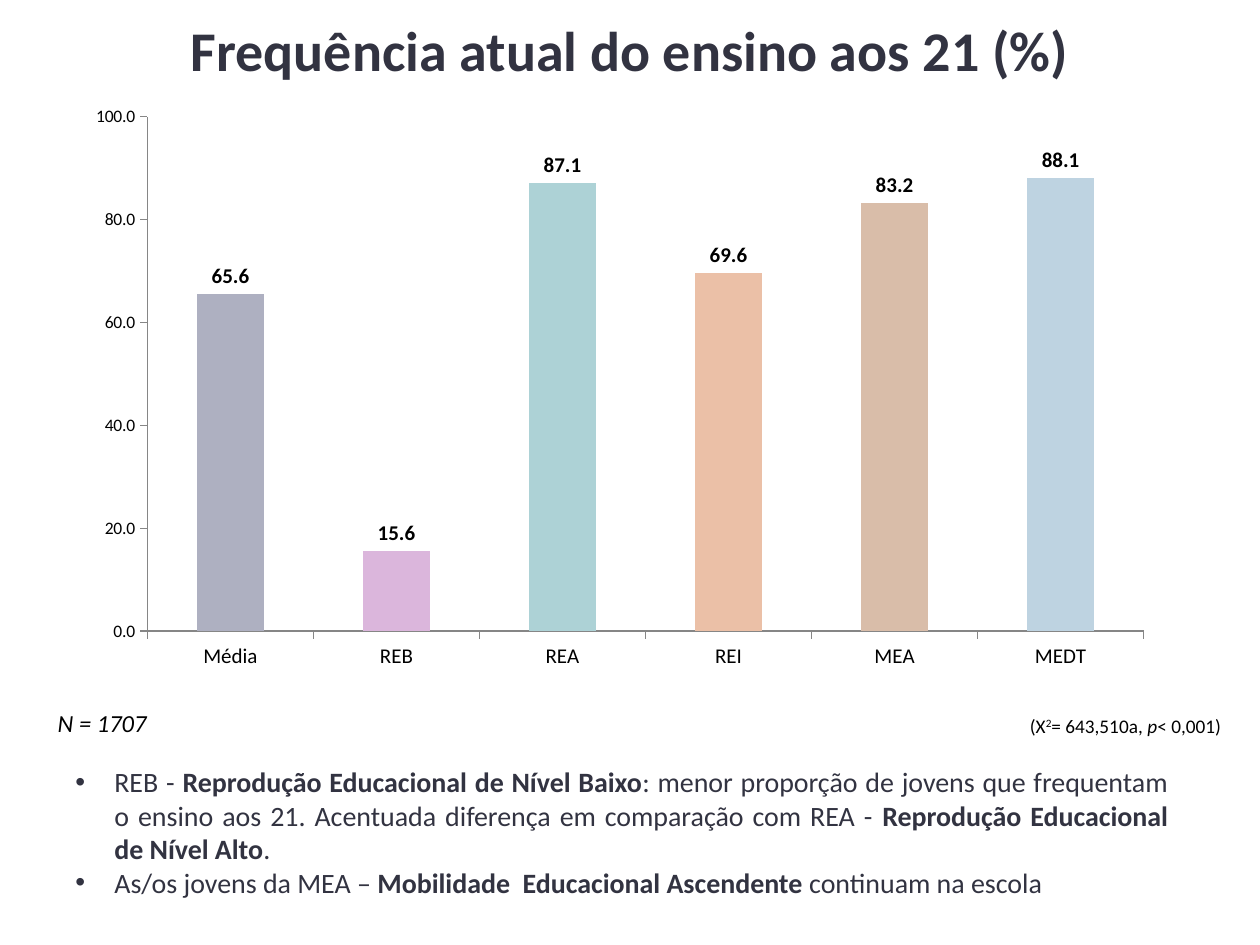
from lxml import etree
from pptx import Presentation
from pptx.chart.data import CategoryChartData
from pptx.dml.color import RGBColor
from pptx.enum.chart import XL_CHART_TYPE as Chart, XL_LABEL_POSITION as LabelPos, XL_TICK_MARK as Tick
from pptx.enum.text import MSO_ANCHOR as Anchor, PP_ALIGN as Align
from pptx.oxml import parse_xml
from pptx.oxml.ns import nsdecls, qn
from pptx.util import Inches, Pt

INK = RGBColor(0x32, 0x33, 0x41)
BLACK = RGBColor(0x00, 0x00, 0x00)
AXIS = RGBColor(0x86, 0x86, 0x86)
LILAC_GREY = RGBColor(0xAE, 0xB0, 0xC1)
PINK = RGBColor(0xDB, 0xB6, 0xDC)
TEAL = RGBColor(0xAD, 0xD2, 0xD6)
PEACH = RGBColor(0xEB, 0xC0, 0xA7)
SAND = RGBColor(0xD9, 0xBD, 0xA9)
BLUE = RGBColor(0xBE, 0xD3, 0xE1)

ATTENDANCE = [
    ("Média", 65.6, LILAC_GREY),
    ("REB", 15.6, PINK),
    ("REA", 87.1, TEAL),
    ("REI", 69.6, PEACH),
    ("MEA", 83.2, SAND),
    ("MEDT", 88.1, BLUE),
]
FINDINGS = [
    [("REB - ", ""), ("Reprodução Educacional de Nível Baixo", "b"),
     (": menor proporção de jovens que frequentam o ensino aos 21. "
      "Acentuada diferença em comparação com REA - ", ""),
     ("Reprodução Educacional de Nível Alto", "b"), (". ", "")],
    [("As/os jovens da MEA – ", ""), ("Mobilidade  Educacional Ascendente ", "b"),
     ("continuam na escola", "")],
]
CHI_SQUARE = [("(X", ""), ("2", "^"), ("= 643,510a, ", ""), ("p", "i"), ("< 0,001)", "")]


class SlideKit:
    """Style and current slide, placed on a grid of 100 columns by 75 rows."""

    font = "Calibri"
    number_format = "###0.0"

    def __init__(self, prs):
        self.s = prs.slides.add_slide(prs.slide_layouts[6])
        self.col, self.row = prs.slide_width / 100, prs.slide_height / 75

    def box(self, x, y, w, h):
        return int(x * self.col), int(y * self.row), int(w * self.col), int(h * self.row)

    def style(self, font, size, color=BLACK, bold=False):
        font.name, font.size, font.bold = self.font, Pt(size), bold
        font.color.rgb = color

    def text(self, place, paragraphs, size, color=BLACK, align=Align.LEFT,
             anchor=Anchor.TOP, bullet=False):
        tf = self.s.shapes.add_textbox(*self.box(*place)).text_frame
        tf.word_wrap, tf.vertical_anchor = True, anchor
        for i, runs in enumerate(paragraphs):
            p = tf.add_paragraph() if i else tf.paragraphs[0]
            p.alignment = align
            if bullet:
                self.bullet(p)
            for words, marks in runs:
                r = p.add_run()
                r.text = words
                self.style(r.font, size, color, "b" in marks)
                r.font.italic = "i" in marks
                if "^" in marks:
                    r.font._element.set("baseline", "30000")

    def bullet(self, p):
        pPr = p._p.get_or_add_pPr()
        indent = Inches(0.31)
        pPr.set("marL", str(indent))
        pPr.set("indent", str(-indent))
        etree.SubElement(pPr, qn("a:buFont")).set("typeface", "Arial")
        etree.SubElement(pPr, qn("a:buChar")).set("char", "•")

    def axis(self, axis, size):
        axis.has_major_gridlines = False
        axis.major_tick_mark, axis.minor_tick_mark = Tick.OUTSIDE, Tick.NONE
        axis.format.line.color.rgb = AXIS
        axis.format.line.width = Pt(0.75)
        self.style(axis.tick_labels.font, size)

    def plot_area(self, chart, **shares):
        parts = "".join(f'<c:{k} val="{v}"/>' for k, v in shares.items())
        area = chart._chartSpace.chart.plotArea
        for old in area.findall(qn("c:layout")):
            area.remove(old)
        area.insert(0, parse_xml(
            f'<c:layout {nsdecls("c")}><c:manualLayout><c:layoutTarget val="inner"/>'
            f'<c:xMode val="edge"/><c:yMode val="edge"/>{parts}</c:manualLayout></c:layout>'))

    def columns(self, place, rows):
        names, values, colors = zip(*rows)
        data = CategoryChartData(number_format=self.number_format)
        data.categories = names
        data.add_series("Series 1", values)
        chart = self.s.shapes.add_chart(Chart.COLUMN_CLUSTERED, *self.box(*place), data).chart
        chart.has_legend = chart.has_title = False
        self.style(chart.font, 10)
        self.axis(chart.category_axis, 12)
        axis = chart.value_axis
        self.axis(axis, 10)
        axis.minimum_scale, axis.maximum_scale, axis.major_unit = 0, 100, 20
        axis.tick_labels.number_format = self.number_format
        axis.tick_labels.number_format_is_linked = False
        plot = chart.plots[0]
        plot.gap_width, plot.vary_by_categories, plot.has_data_labels = 150, False, True
        labels = plot.data_labels
        labels.show_value, labels.position = True, LabelPos.OUTSIDE_END
        labels.number_format, labels.number_format_is_linked = self.number_format, False
        self.style(labels.font, 12, bold=True)
        for i, color in enumerate(colors):
            fill = plot.series[0].points[i].format.fill
            fill.solid()
            fill.fore_color.rgb = color
        self.plot_area(chart, x=0.067, y=0.036, w=0.913, h=0.878)


def main():
    prs = Presentation()
    prs.slide_width, prs.slide_height = Inches(10), Inches(7.5)
    kit = SlideKit(prs)
    kit.text((5, 0, 90, 7.8), [[("Frequência atual do ensino aos 21 (%)", "b")]], 32, INK,
             Align.CENTER, Anchor.MIDDLE)
    kit.columns((5.9, 7.6, 86.6, 46.5), ATTENDANCE)
    kit.text((75.9, 56.2, 22, 2.9), [CHI_SQUARE], 11, align=Align.RIGHT)
    kit.text((3.6, 55.7, 12.2, 3.4), [[("N = 1707", "i")]], 14)
    kit.text((5, 60.2, 88.7, 11.8), FINDINGS, 16, INK, Align.JUSTIFY, bullet=True)
    prs.save("out.pptx")


if __name__ == "__main__":
    main()
